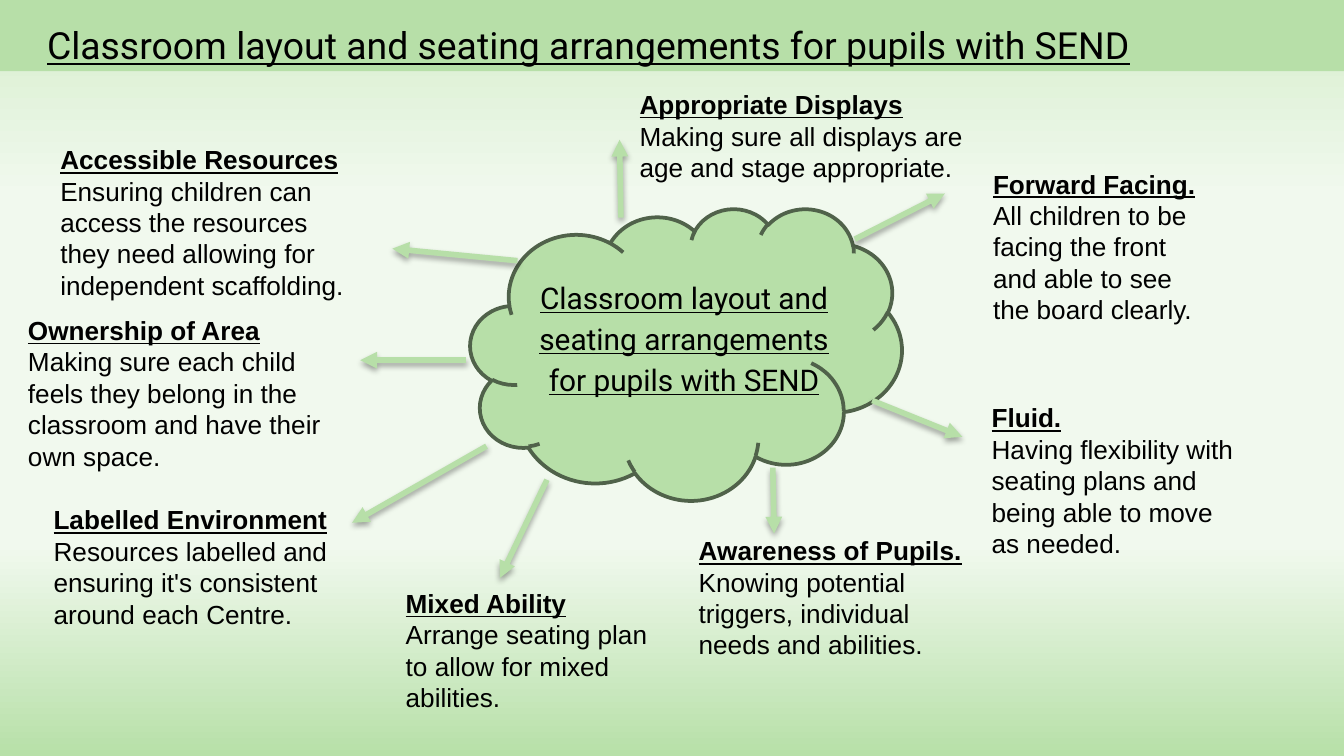
from lxml import etree
from pptx import Presentation
from pptx import util as u
from pptx.dml.color import RGBColor
from pptx.enum import shapes, text
from pptx.oxml import parse_xml
from pptx.oxml.ns import nsdecls, qn

PX = 9144  # EMU per px, 100 px to the inch
COLOURS = {
    "green": "B7DFA8",
    "outline": "50624A",
    "text": "000000",
    "top": "D5EDCB",
    "middle": "F1F9EE",
    "bottom": "B7E0A8",
}
GRADIENT = [(0, "top"), (26, "middle"), (72, "middle"), (100, "bottom")]
TOPIC = "Classroom layout and seating arrangements for pupils with SEND"

# heading, body, box (left, top, width, height), arrow (from x, y, to x, y)
IDEAS = [
    ("Forward Facing.",
     "All children to be facing the front and able to see the board clearly.",
     (729, 120, 172, 128), (636, 178, 703, 144)),
    ("Fluid.",
     "Having flexibility with seating plans and being able to move as needed.",
     (728, 294, 204, 128), (649, 298, 716, 325)),
    ("Awareness of Pupils.",
     "Knowing potential triggers, individual needs and abilities.",
     (510, 393, 219, 104), (575, 348, 576, 397)),
    ("Mixed Ability",
     "Arrange seating plan to allow for mixed abilities.",
     (292, 432, 219, 104), (407, 357, 372, 430)),
    ("Labelled Environment",
     "Resources labelled and ensuring it's consistent around each Centre.",
     (30, 370, 239, 104), (362, 332, 262, 389)),
    ("Ownership of Area",
     "Making sure each child feels they belong in the classroom and have their own space.",
     (11, 229, 239, 128), (347, 268, 268, 268)),
    ("Accessible Resources",
     "Ensuring children can access the resources they need allowing for independent scaffolding.",
     (35, 102, 239, 128), (385, 194, 292, 185)),
    ("Appropriate Displays",
     "Making sure all displays are age and stage appropriate.",
     (466, 61, 265, 81), (462, 162, 461, 104)),
]


def px(*lengths):
    return [u.Emu(length * PX) for length in lengths]


def colour(name):
    return RGBColor.from_string(COLOURS[name])


def style(paragraph, font_name, size, bold=False, underline=False):
    for run in paragraph.runs:
        font = run.font
        font.name, font.size = font_name, u.Pt(size)
        font.bold, font.underline = bold, underline
        font.color.rgb = colour("text")


def set_background(slide):
    fill = slide.background.fill
    fill.gradient()
    fill.gradient_angle = 270
    stop_list = next(slide.element.iter(qn("a:gsLst")))
    for stop in list(stop_list):
        stop_list.remove(stop)
    for position, name in GRADIENT:
        stop = etree.SubElement(stop_list, qn("a:gs"), pos=str(position * 1000))
        etree.SubElement(stop, qn("a:srgbClr"), val=COLOURS[name])


def add_filled_shape(slide, kind, box, outline=None):
    shape = slide.shapes.add_shape(kind, *px(*box))
    shape.shadow.inherit = False
    shape.fill.solid()
    shape.fill.fore_color.rgb = colour("green")
    if outline:
        shape.line.color.rgb = colour(outline)
        shape.line.width = u.Pt(2)
    else:
        shape.line.fill.background()


def set_topic(shape, size, alignment):
    """Write the underlined topic, without insets, into a title or text box."""
    frame = shape.text_frame
    frame.text = TOPIC
    frame.word_wrap = True
    frame.auto_size = text.MSO_AUTO_SIZE.NONE
    frame.margin_left = frame.margin_top = frame.margin_right = frame.margin_bottom = 0
    paragraph = frame.paragraphs[0]
    paragraph.alignment = alignment
    style(paragraph, "Roboto", size, underline=True)
    return paragraph


def add_title(slide):
    title = slide.shapes.title
    title.left, title.top, title.width, title.height = px(35, 0, 862, 67)
    set_topic(title, 20, text.PP_ALIGN.LEFT)
    title.text_frame.vertical_anchor = text.MSO_ANCHOR.MIDDLE
    title.element.getparent().append(title.element)  # in front of the band


def add_cloud_label(slide):
    label = slide.shapes.add_textbox(*px(350, 204, 268, 155))
    paragraph = set_topic(label, 16, text.PP_ALIGN.CENTER)
    paragraph.line_spacing = 1.15
    properties = paragraph._p.get_or_add_pPr()
    properties.set("marL", str(50 * PX))
    properties.set("indent", "0")


def add_arrow(slide, ends):
    arrow = slide.shapes.add_connector(shapes.MSO_CONNECTOR.STRAIGHT, *px(*ends))
    arrow.line.color.rgb = colour("green")
    arrow.line.width = u.Pt(3)
    properties = arrow.element.spPr
    etree.SubElement(properties.find(qn("a:ln")), qn("a:tailEnd"), type="triangle")
    properties.append(parse_xml(
        f'<a:effectLst {nsdecls("a")}>'
        '<a:outerShdw blurRad="40000" dist="23000" dir="5400000" rotWithShape="0">'
        f'<a:srgbClr val="{COLOURS["text"]}"><a:alpha val="35000"/></a:srgbClr>'
        '</a:outerShdw></a:effectLst>'))


def add_idea(slide, heading, body, box):
    frame = slide.shapes.add_textbox(*px(*box)).text_frame
    frame.word_wrap = True
    frame.auto_size = text.MSO_AUTO_SIZE.SHAPE_TO_FIT_TEXT
    frame.text = heading
    style(frame.paragraphs[0], "Arial", 14, bold=True, underline=True)
    paragraph = frame.add_paragraph()
    paragraph.text = body
    style(paragraph, "Arial", 14)


def main():
    presentation = Presentation()
    presentation.slide_width = u.Emu(1000 * PX)
    presentation.slide_height = u.Emu(presentation.slide_width * 9 // 16)
    slide = presentation.slides.add_slide(presentation.slide_layouts[5])
    set_background(slide)

    # Header band and title
    add_filled_shape(slide, shapes.MSO_SHAPE.RECTANGLE, (0, 0, 1000, 53))
    add_title(slide)

    # Central cloud
    add_filled_shape(slide, shapes.MSO_SHAPE.CLOUD, (350, 155, 321, 217), "outline")
    add_cloud_label(slide)

    # Ideas around the cloud
    for heading, body, box, ends in IDEAS:
        add_arrow(slide, ends)
        add_idea(slide, heading, body, box)

    presentation.save("out.pptx")


if __name__ == "__main__":
    main()
